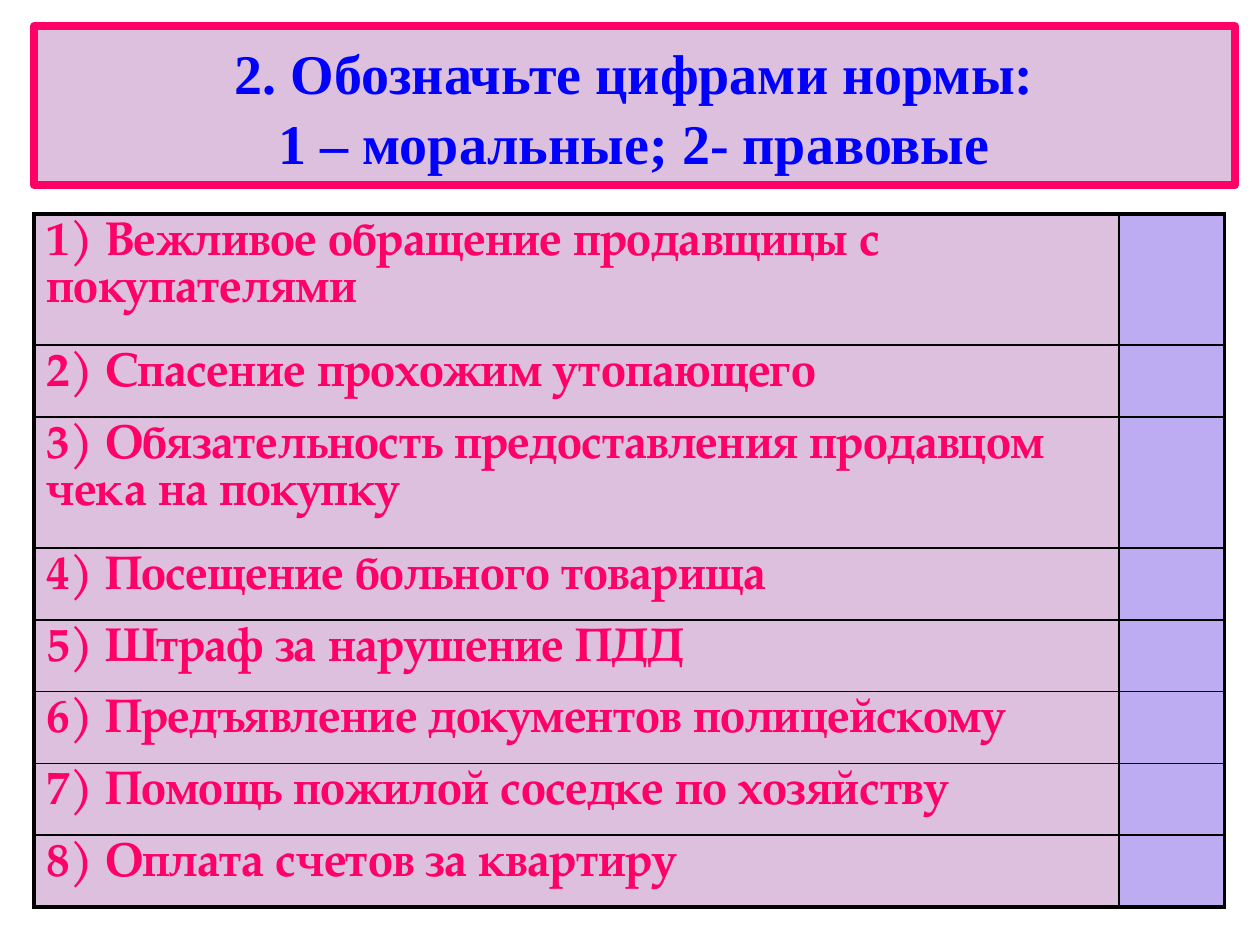
from lxml import etree
from pptx import Presentation
from pptx.dml.color import RGBColor
from pptx.enum import text
from pptx.oxml import ns
from pptx.util import Inches, Pt

PINK = RGBColor(0xFF, 0x00, 0x66)
BLUE = RGBColor(0x00, 0x00, 0xFF)
MAUVE = RGBColor(0xDD, 0xC0, 0xDE)
LILAC = RGBColor(0xBD, 0xAC, 0xF2)
BLACK = RGBColor(0x00, 0x00, 0x00)

TITLE_LINES = ["2. Обозначьте цифрами нормы:", "1 – моральные; 2- правовые"]
TITLE_FONT = {"name": "Times New Roman", "size": Pt(32), "bold": True}
NORM_FONT = {"name": "TeX Gyre Pagella", "size": Pt(27), "bold": True}

TALL, SHORT = 1.04, 0.57
NORMS = [
    ("1) Вежливое обращение продавщицы с покупателями", TALL),
    ("2) Спасение прохожим утопающего", SHORT),
    ("3) Обязательность предоставления продавцом чека на покупку", TALL),
    ("4) Посещение больного товарища", SHORT),
    ("5) Штраф за нарушение ПДД", SHORT),
    ("6) Предъявление документов полицейскому", SHORT),
    ("7) Помощь пожилой соседке по хозяйству", SHORT),
    ("8) Оплата счетов за квартиру", SHORT),
]
ANSWER_WIDTH = 0.84
OUTER, INNER = Pt(2.25), Pt(1)


def format_font(font, values, color):
    for name, value in values.items():
        setattr(font, name, value)
    font.color.rgb = color


def add_title(page, left, top, width, height):
    title = page.shapes.title
    title.left, title.top = Inches(left), Inches(top)
    title.width, title.height = Inches(width), Inches(height)
    title.fill.solid()
    title.fill.fore_color.rgb = MAUVE
    title.line.color.rgb = PINK
    title.line.width = Pt(4.5)

    frame = title.text_frame
    frame.word_wrap = True
    frame.auto_size = text.MSO_AUTO_SIZE.NONE
    frame.vertical_anchor = text.MSO_ANCHOR.MIDDLE
    para = frame.paragraphs[0]
    para.alignment = text.PP_ALIGN.CENTER
    para.line_spacing = 1.04
    format_font(para.font, TITLE_FONT, BLUE)
    for number, line in enumerate(TITLE_LINES):
        if number:
            para.add_line_break()
        span = para.add_run()
        span.text = line
        format_font(span.font, TITLE_FONT, BLUE)


def set_borders(cell, widths):
    properties = cell._tc.get_or_add_tcPr()
    for side, width in widths.items():
        line = etree.SubElement(properties, ns.qn(f"a:ln{side}"), w=str(width))
        fill = etree.SubElement(line, ns.qn("a:solidFill"))
        etree.SubElement(fill, ns.qn("a:srgbClr"), val=str(BLACK))


def add_norms_table(page, left, top, width, height):
    frame = page.shapes.add_table(len(NORMS), 2, Inches(left), Inches(top),
                                  Inches(width), Inches(height))
    table = frame.table
    table.first_row = table.horz_banding = False
    table.columns[0].width = Inches(width - ANSWER_WIDTH)
    table.columns[1].width = Inches(ANSWER_WIDTH)

    last = len(NORMS) - 1
    for row, (norm, row_height) in enumerate(NORMS):
        table.rows[row].height = Inches(row_height)
        for column, color in enumerate((MAUVE, LILAC)):
            cell = table.cell(row, column)
            # Heavy lines on the outside, thin ones between cells
            set_borders(cell, {
                "L": OUTER if column == 0 else INNER,
                "R": OUTER if column == 1 else INNER,
                "T": OUTER if row == 0 else INNER,
                "B": OUTER if row == last else INNER,
            })
            cell.fill.solid()
            cell.fill.fore_color.rgb = color

        # Norm text; the answer cell stays empty
        para = table.cell(row, 0).text_frame.paragraphs[0]
        para.line_spacing = Pt(27)
        span = para.add_run()
        span.text = norm
        format_font(span.font, NORM_FONT, PINK)


def main():
    deck = Presentation()
    deck.slide_width, deck.slide_height = Inches(10), Inches(7.5)
    page = deck.slides.add_slide(deck.slide_layouts[5])
    add_title(page, 0.27, 0.21, 9.53, 1.26)
    add_norms_table(page, 0.27, 1.7, 9.45, sum(size for _, size in NORMS))
    deck.save("out.pptx")


if __name__ == "__main__":
    main()
